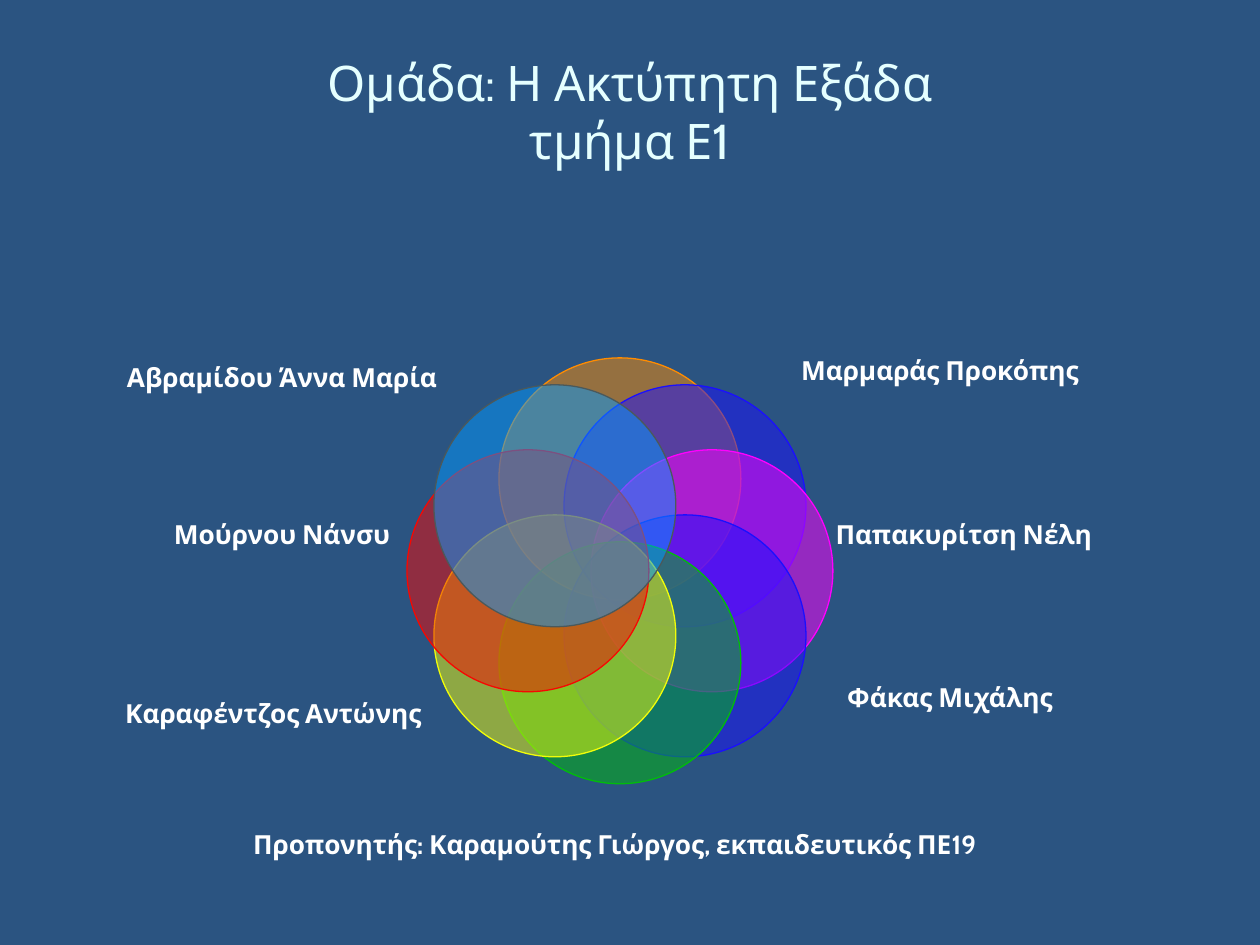
from math import cos, radians, sin

from lxml.etree import SubElement
from pptx import Presentation
from pptx.dml.color import RGBColor
from pptx.enum.shapes import MSO_SHAPE
from pptx.enum.text import MSO_ANCHOR, MSO_AUTO_SIZE, PP_ALIGN
from pptx.oxml.ns import qn
from pptx.util import Inches, Pt

FONT = "Cabin"
COLORS = {
    "back": "2B5481", "title": "E5FFFF", "text": "FFFFFF",
    "orange": "FF8C01", "blue": "1A0FFF", "pink": "FF00FF",
    "green": "01BD0A", "yellow": "F1FD09", "red": "F60802",
    "sky": "0399FF", "slate": "4B595B",
}
RING = [
    ("orange", "orange"), ("blue", "blue"), ("pink", "pink"), ("blue", "blue"),
    ("green", "green"), ("yellow", "yellow"), ("red", "red"), ("sky", "slate"),
]
NAMES = [
    ("Αβραμίδου Άννα Μαρία", 0.25, 0.05, 1.64, 0.48),
    ("Μαρμαράς Προκόπης", 5.33, 0, 1.92, 0.48),
    ("Παπακυρίτση Νέλη", 5.66, 1.3, 1.64, 0.48),
    ("Φάκας Μιχάλης", 5.41, 2.55, 1.92, 0.56),
    ("Μούρνου Νάνσυ", 0.25, 1.3, 1.64, 0.48),
    ("Καραφέντζος Αντώνης", 0, 2.72, 2, 0.48),
]


def color(name):
    """Return a named colour."""
    return RGBColor.from_string(COLORS[name])


def style(para, size, tint, bold=False):
    """Centre a paragraph and set its font."""
    para.alignment = PP_ALIGN.CENTER
    font = para.font
    font.name, font.size, font.bold = FONT, Pt(size), bold
    font.color.rgb = color(tint)


def add_title(slide, left, top, width, height):
    """Place the two-line title."""
    title = slide.shapes.title
    title.left, title.top = Inches(left), Inches(top)
    title.width, title.height = Inches(width), Inches(height)
    frame = title.text_frame
    frame.text = "Ομάδα: Η Ακτύπητη Εξάδα\vτμήμα Ε1"
    frame.auto_size = MSO_AUTO_SIZE.NONE
    frame.vertical_anchor = MSO_ANCHOR.MIDDLE
    style(frame.paragraphs[0], 28, "title")


def add_disc(shapes, left, top, size, fill, line):
    """Add one half-transparent circle."""
    disc = shapes.add_shape(
        MSO_SHAPE.OVAL, Inches(left), Inches(top), Inches(size), Inches(size))
    disc.shadow.inherit = False
    disc.fill.solid()
    disc.fill.fore_color.rgb = color(fill)
    tone = disc.fill._xPr.find(qn("a:solidFill"))[0]
    SubElement(tone, qn("a:alpha"), val="50000")
    disc.line.color.rgb = color(line)
    disc.line.width = Pt(0.75)


def add_ring(slide, left, top, side, size):
    """Set the circles evenly around a ring inside a square box."""
    group = slide.shapes.add_group_shape()
    reach = (side - size) / 2
    for i, (fill, line) in enumerate(RING):
        turn = radians(360 / len(RING) * i)
        add_disc(group.shapes, left + reach * (1 + sin(turn)),
                 top + reach * (1 - cos(turn)), size, fill, line)


def add_label(slide, text, left, top, width, height):
    """Add a bold centred label on one line."""
    box = slide.shapes.add_shape(
        MSO_SHAPE.RECTANGLE, Inches(left), Inches(top),
        Inches(width), Inches(height))
    box.shadow.inherit = False
    box.fill.background()
    box.line.fill.background()
    frame = box.text_frame
    frame.text = text
    frame.word_wrap = False
    frame.vertical_anchor = MSO_ANCHOR.MIDDLE
    frame.margin_left = frame.margin_right = 0
    frame.margin_top = frame.margin_bottom = 0
    style(frame.paragraphs[0], 15, "text", True)


def add_names(slide, left, top):
    """Place the team names around the ring."""
    for text, x, y, width, height in NAMES:
        add_label(slide, text, left + x, top + y, width, height)


def main():
    """Build and save the slide."""
    deck = Presentation()
    deck.slide_width, deck.slide_height = Inches(10), Inches(7.5)
    slide = deck.slides.add_slide(deck.slide_layouts[5])
    slide.background.fill.solid()
    slide.background.fill.fore_color.rgb = color("back")
    add_title(slide, 0.5, 0.42, 9, 0.92)
    add_ring(slide, 3.23, 2.84, 3.38, 1.92)
    add_names(slide, 1.17, 2.7)
    add_label(slide, "Προπονητής: Καραμούτης Γιώργος, εκπαιδευτικός ΠΕ19",
              3.92, 6.42, 1.92, 0.56)
    deck.save("out.pptx")


if __name__ == "__main__":
    main()
